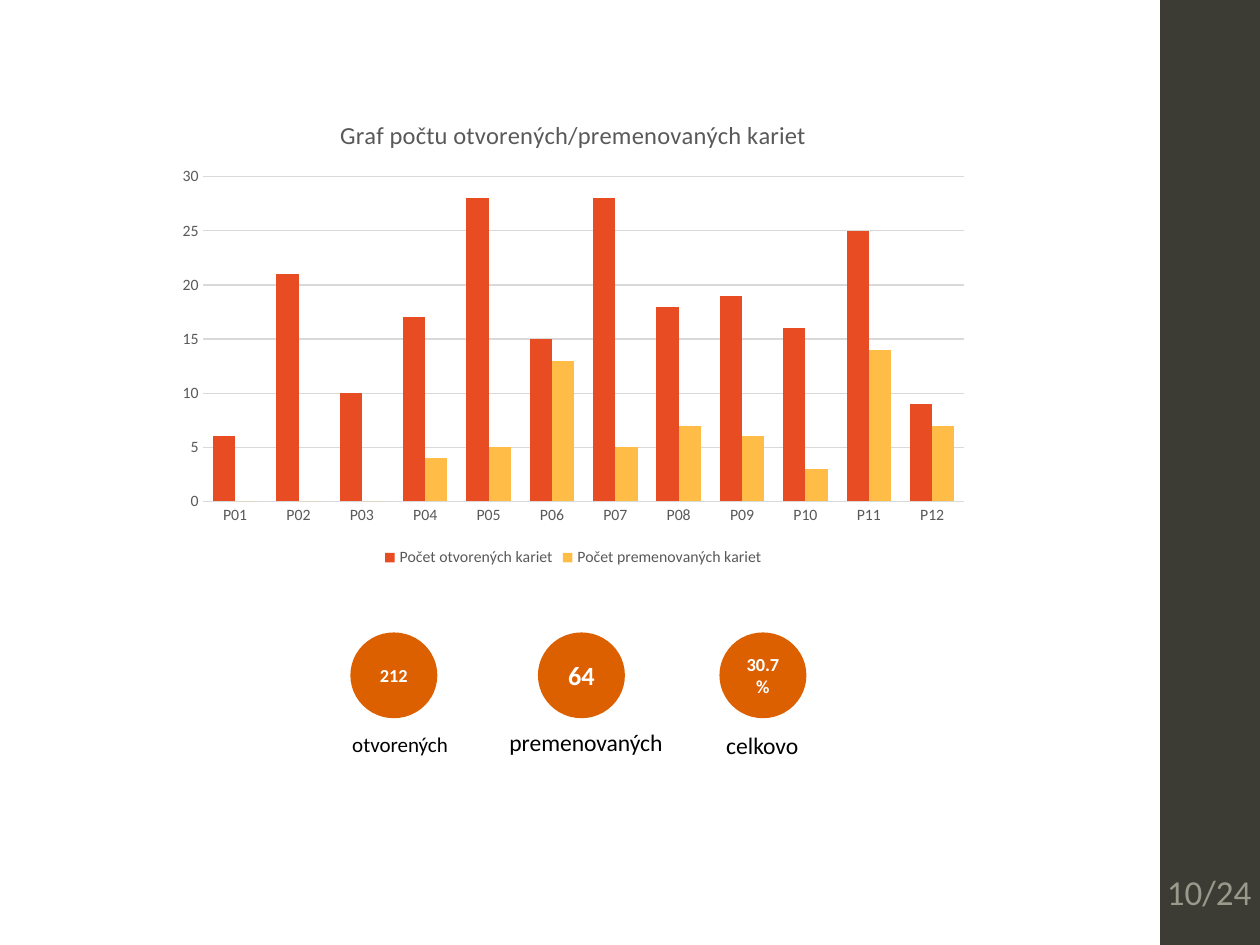
from typing import NamedTuple

from pptx import Presentation
from pptx.chart.data import CategoryChartData
from pptx.dml.color import RGBColor
from pptx.enum.chart import XL_CHART_TYPE, XL_LEGEND_POSITION, XL_TICK_MARK
from pptx.enum.shapes import MSO_SHAPE
from pptx.enum.text import MSO_ANCHOR, PP_ALIGN
from pptx.util import Pt

WHITE = RGBColor(0xFF, 0xFF, 0xFF)
BLACK = RGBColor(0x00, 0x00, 0x00)
DARK = RGBColor(0x3C, 0x3C, 0x34)
GREY = RGBColor(0x59, 0x59, 0x59)
PALE = RGBColor(0xD9, 0xD9, 0xD9)
STONE = RGBColor(0x9A, 0x9A, 0x8C)
RED = RGBColor(0xE8, 0x4C, 0x22)
GOLD = RGBColor(0xFF, 0xBD, 0x47)
RUST = RGBColor(0xDC, 0x5F, 0x00)
FACE = "Calibri"


class Box(NamedTuple):
    left: float
    top: float
    width: float
    height: float

    def points(self):
        return [Pt(side) for side in self]


class Series(NamedTuple):
    name: str
    values: tuple
    color: RGBColor


class Total(NamedTuple):
    left: float
    value: str
    size: float
    label: str
    label_box: Box
    label_size: float


SERIES = [
    Series("Počet otvorených kariet", (6, 21, 10, 17, 28, 15, 28, 18, 19, 16, 25, 9), RED),
    Series("Počet premenovaných kariet", (0, 0, 0, 4, 5, 13, 5, 7, 6, 3, 14, 7), GOLD),
]
TOTALS = [
    Total(200.2, "212", 10.5, "otvorených", Box(190.8, 414.7, 75.6, 42.5), 12),
    Total(307.4, "64", 15, "premenovaných", Box(279.4, 412.6, 110.9, 46.8), 13.5),
    Total(411.1, "30.7%", 10.5, "celkovo", Box(406.8, 414, 57.6, 46.8), 13.5),
]


def set_font(font, size: float, color: RGBColor, bold: bool = False) -> None:
    font.name = FACE
    font.size = Pt(size)
    font.bold = bold
    font.color.rgb = color


def write(shape, text: str, *, size: float, color: RGBColor, bold: bool = False,
          align=PP_ALIGN.CENTER, anchor=MSO_ANCHOR.TOP, inset: float = 7.2) -> None:
    frame = shape.text_frame
    frame.word_wrap = True
    frame.vertical_anchor = anchor
    frame.margin_left = frame.margin_right = Pt(inset)
    line = frame.paragraphs[0]
    line.alignment = align
    run = line.add_run()
    run.text = text
    set_font(run.font, size, color, bold)


def add_solid(slide, kind: MSO_SHAPE, box: Box, color: RGBColor):
    shape = slide.shapes.add_shape(kind, *box.points())
    shape.shadow.inherit = False
    shape.fill.solid()
    shape.fill.fore_color.rgb = color
    shape.line.fill.background()
    return shape


def add_bars(slide, box: Box) -> None:
    data = CategoryChartData()
    data.categories = [f"P{number:02d}" for number in range(1, 13)]
    for item in SERIES:
        data.add_series(item.name, item.values)
    chart = slide.shapes.add_chart(
        XL_CHART_TYPE.COLUMN_CLUSTERED, *box.points(), data).chart
    set_font(chart.font, 10, BLACK)

    chart.has_title = True
    title = chart.chart_title.text_frame
    title.text = "Graf počtu otvorených/premenovaných kariet"
    set_font(title.paragraphs[0].runs[0].font, 14, GREY)

    chart.has_legend = True
    chart.legend.position = XL_LEGEND_POSITION.BOTTOM
    chart.legend.include_in_layout = False
    set_font(chart.legend.font, 9, GREY)

    for axis in (chart.category_axis, chart.value_axis):
        axis.major_tick_mark = XL_TICK_MARK.NONE
        axis.minor_tick_mark = XL_TICK_MARK.NONE
        set_font(axis.tick_labels.font, 9, GREY)
    scale = chart.value_axis
    scale.minimum_scale, scale.maximum_scale, scale.major_unit = 0, 30, 5
    scale.format.line.fill.background()
    for line in (chart.category_axis.format.line, scale.major_gridlines.format.line):
        line.color.rgb = PALE
        line.width = Pt(0.75)

    plot = chart.plots[0]
    plot.gap_width = 85
    plot.overlap = 0
    plot.vary_by_categories = False
    for bars, item in zip(plot.series, SERIES):
        bars.invert_if_negative = False
        bars.format.fill.solid()
        bars.format.fill.fore_color.rgb = item.color


def add_total(slide, total: Total) -> None:
    disc = add_solid(slide, MSO_SHAPE.OVAL, Box(total.left, 361.4, 49.7, 49), RUST)
    write(disc, total.value, size=total.size, color=WHITE, bold=True,
          anchor=MSO_ANCHOR.MIDDLE)
    label = slide.shapes.add_textbox(*total.label_box.points())
    write(label, total.label, size=total.label_size, color=BLACK)


def main() -> None:
    deck = Presentation()
    deck.slide_width, deck.slide_height = Pt(720), Pt(540)
    slide = deck.slides.add_slide(deck.slide_layouts[6])
    add_solid(slide, MSO_SHAPE.RECTANGLE, Box(663, 0, 57, 540), DARK)
    add_bars(slide, Box(95, 55.4, 465.1, 271.4))
    for total in TOTALS:
        add_total(slide, total)
    page = slide.shapes.add_textbox(*Box(664.6, 486, 54, 46.8).points())
    write(page, "10/24", size=20, color=STONE, align=PP_ALIGN.LEFT,
          anchor=MSO_ANCHOR.MIDDLE, inset=2.2)
    deck.save("out.pptx")


if __name__ == "__main__":
    main()
